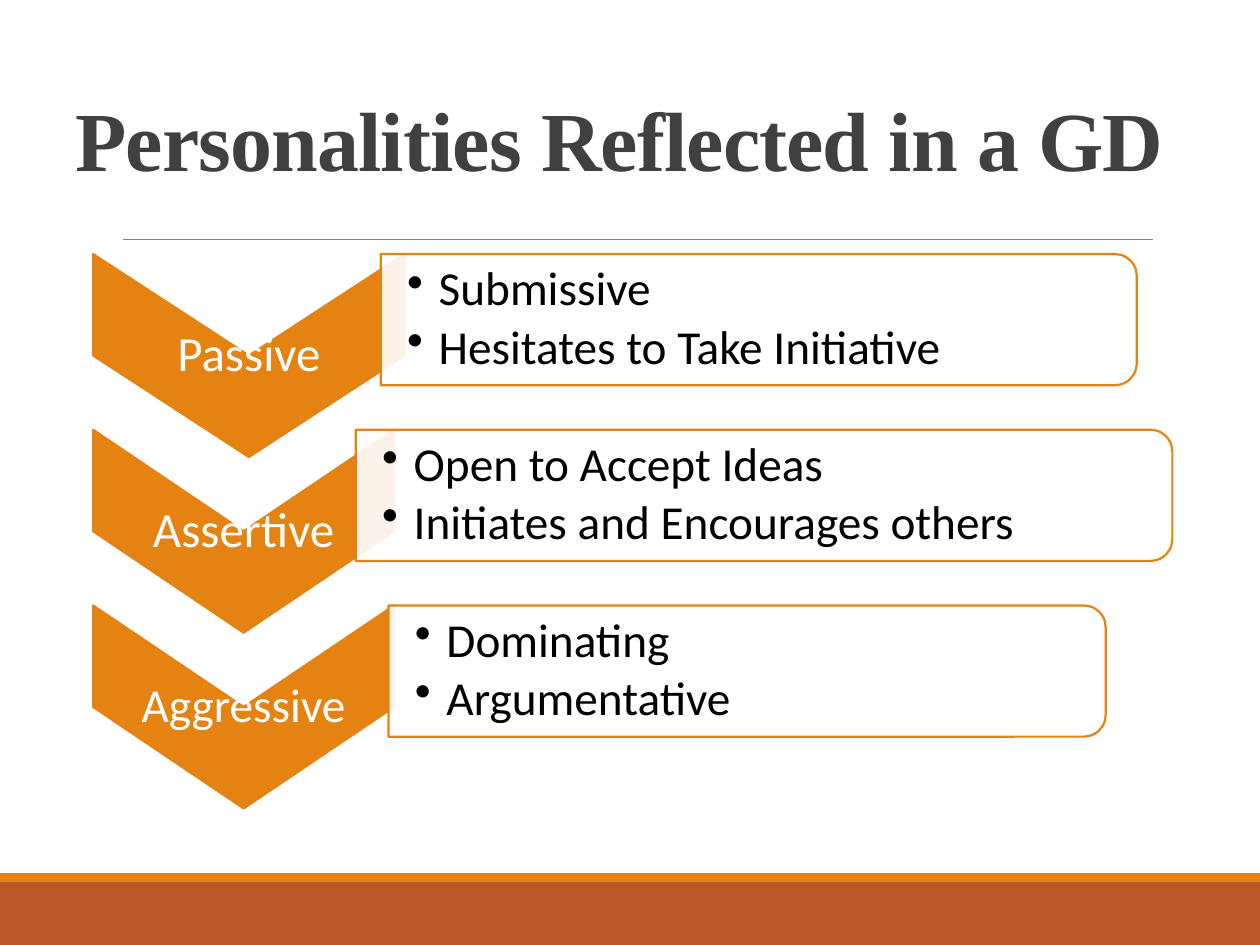
from lxml import etree
from pptx import Presentation
from pptx.dml.color import RGBColor
from pptx.enum.shapes import MSO_CONNECTOR, MSO_SHAPE
from pptx.enum.text import MSO_ANCHOR, PP_ALIGN
from pptx.oxml.ns import qn
from pptx.util import Pt

RECT, CHEVRON = MSO_SHAPE.RECTANGLE, MSO_SHAPE.CHEVRON
PANEL = MSO_SHAPE.ROUND_2_SAME_RECTANGLE
MIDDLE, BOTTOM = MSO_ANCHOR.MIDDLE, MSO_ANCHOR.BOTTOM
LEFT, CENTER = PP_ALIGN.LEFT, PP_ALIGN.CENTER

TITLE = "Personalities Reflected in a GD"
# label, label size, chevron width, panel left, panel width, points
ROWS = [
    ("Passive", 28, 178, 217.6, 432, ["Submissive", "Hesitates to Take Initiative"]),
    ("Assertive", 28, 172, 203.3, 466.6, ["Open to Accept Ideas", "Initiates and Encourages others"]),
    ("Aggressive", 27, 172, 222, 409.8, ["Dominating", "Argumentative"]),
]
ORANGE, RUST, WHITE, BLACK = "E48312", "BD582C", "FFFFFF", "000000"
ROW_X, ROW_Y, STEP = 53.2, 145.2, 100.4
CHEV_H, PANEL_H = 116, 75

prs = Presentation()
prs.slide_width, prs.slide_height = Pt(720), Pt(540)
slide = prs.slides.add_slide(prs.slide_layouts[6])
shapes = slide.shapes


def rgb(code):
    return RGBColor.from_string(code)


def add_form(kind, x, y, w, h, fill, line=None, turn=0):
    """Place a shape by the box it shows in; a quarter turn swaps its sides."""
    if turn:
        x, y, w, h = x + (w - h) / 2, y + (h - w) / 2, h, w
    form = shapes.add_shape(kind, Pt(x), Pt(y), Pt(w), Pt(h))
    form.rotation = turn
    form.shadow.inherit = False
    form.fill.solid()
    form.fill.fore_color.rgb = rgb(fill)
    if line:
        form.line.color.rgb = rgb(line)
        form.line.width = Pt(1.25)
    else:
        form.line.fill.background()
    return form


def add_text(lines, x, y, w, h, size, color, font="Calibri", align=LEFT,
             anchor=MIDDLE, pads=(1.4, 1.4), gap=0, lead=0.9):
    frame = shapes.add_textbox(Pt(x), Pt(y), Pt(w), Pt(h)).text_frame
    frame.word_wrap = True
    frame.vertical_anchor = anchor
    frame.margin_left, frame.margin_right = map(Pt, pads)
    frame.margin_top = frame.margin_bottom = Pt(1.4)
    frame.text = "\n".join(lines)
    for para in frame.paragraphs:
        para.alignment, para.line_spacing, para.space_after = align, lead, Pt(gap)
        face = para.runs[0].font
        face.name, face.size = font, Pt(size)
        face.color.rgb = rgb(color)
    return frame


# Footer bands
add_form(RECT, 0, 504, 720, 36, RUST)
add_form(RECT, 0, 499, 720, 5, ORANGE)

# Rule under the title
rule = shapes.add_connector(MSO_CONNECTOR.STRAIGHT, Pt(70.5), Pt(136.8), Pt(659), Pt(136.8))
rule.line.color.rgb = rgb("808080")
rule.line.width = Pt(0.5)
etree.SubElement(rule._element.spPr, qn("a:effectLst"))

# Title
head = add_text([TITLE], 36, 54, 648, 57.6, 48, "404040", "Times New Roman",
                anchor=BOTTOM, pads=(7.2, 7.2), lead=0.85)
head.margin_top = head.margin_bottom = Pt(3.6)
run = head.paragraphs[0].runs[0]
run.font.bold = True
run._r.get_or_add_rPr().set("spc", "-50")

# Rows: chevron with label, then panel with bullets
for i, (label, size, chev_w, left, width, points) in enumerate(ROWS):
    top = ROW_Y + i * STEP
    add_form(CHEVRON, ROW_X, top, chev_w, CHEV_H, ORANGE, ORANGE, 90)
    add_text([label], ROW_X, top, chev_w, CHEV_H, size, WHITE, align=CENTER, gap=9.8)

    panel = add_form(PANEL, left, top, width, PANEL_H, WHITE, ORANGE, 90)
    tint = panel.fill._xPr.find(qn("a:solidFill"))[0]
    etree.SubElement(tint, qn("a:alpha"), val="90000")
    body = add_text(points, left, top, width, PANEL_H, 27, BLACK, pads=(15.1, 1.4), gap=4)
    for para in body.paragraphs:
        props = para._p.get_or_add_pPr()
        props.set("marL", str(Pt(18)))
        props.set("indent", str(-Pt(18)))
        etree.SubElement(props, qn("a:buChar"), char="•")

prs.save("out.pptx")
